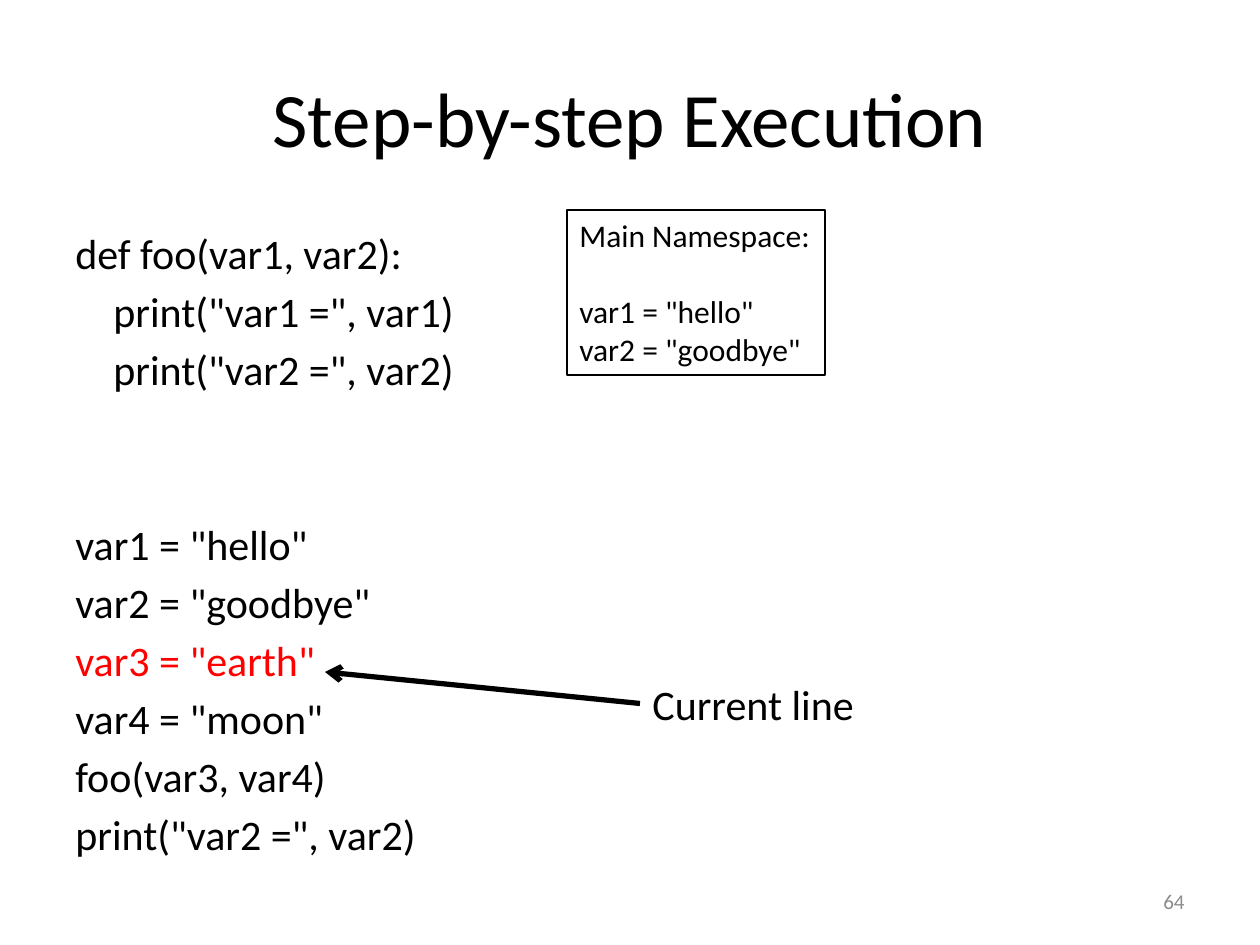
from lxml.etree import SubElement
from pptx import Presentation
from pptx.dml.color import RGBColor
from pptx.enum.shapes import MSO_CONNECTOR, MSO_SHAPE
from pptx.enum.text import MSO_ANCHOR, PP_ALIGN
from pptx.oxml.ns import qn
from pptx.util import Pt

BLACK = RGBColor(0x00, 0x00, 0x00)
RED = RGBColor(0xFF, 0x00, 0x00)
GRAY = RGBColor(0x8C, 0x8C, 0x8C)
EMU_PER_PX = 914400 / 126


def px(*lengths):
    return [round(length * EMU_PER_PX) for length in lengths]


def write(box, lines, size, anchor=MSO_ANCHOR.TOP, align=PP_ALIGN.LEFT, wrap=True):
    """Fill a box with (text, color, points before, indent in px) lines."""
    frame = box.text_frame
    frame.word_wrap = wrap
    frame.vertical_anchor = anchor
    for number, (text, color, before, indent) in enumerate(lines):
        para = frame.add_paragraph() if number else frame.paragraphs[0]
        para.text = text
        para.alignment = align
        para.space_before = Pt(before)
        para.font.name = "Calibri"
        para.font.size = Pt(size)
        para.font.color.rgb = color
        if indent:
            para._p.get_or_add_pPr().set("marL", str(px(indent)[0]))


deck = Presentation()
deck.slide_width, deck.slide_height = px(1260, 945)
page = deck.slides.add_slide(deck.slide_layouts[5])

# Title
title = page.shapes.title
title.left, title.top, title.width, title.height = px(63, 38, 1134, 158)
write(title, [("Step-by-step Execution", BLACK, 0, 0)], 44,
      MSO_ANCHOR.MIDDLE, PP_ALIGN.CENTER)

# Program, with a two-line gap between the function and the main part
GAP = 4.3
PART_GAP = 71.4
code = page.shapes.add_textbox(*px(63, 221, 1134, 624))
write(code, [
    ("def foo(var1, var2):", BLACK, 0, 0),
    ('print("var1 =", var1)', BLACK, GAP, 38),
    ('print("var2 =", var2)', BLACK, GAP, 38),
    ('var1 = "hello"', BLACK, PART_GAP, 0),
    ('var2 = "goodbye"', BLACK, GAP, 0),
    ('var3 = "earth"', RED, GAP, 0),
    ('var4 = "moon"', BLACK, GAP, 0),
    ("foo(var3, var4)", BLACK, GAP, 0),
    ('print("var2 =", var2)', BLACK, GAP, 0),
], 24)

# Slide number
number_box = page.shapes.add_textbox(*px(903, 876, 294, 50))
write(number_box, [("64", GRAY, 0, 0)], 12, MSO_ANCHOR.MIDDLE, PP_ALIGN.RIGHT)

# Label of the current line
label = page.shapes.add_textbox(*px(640, 672, 229, 63))
write(label, [("Current line", BLACK, 0, 0)], 24, wrap=False)

# Main namespace
namespace = page.shapes.add_shape(MSO_SHAPE.RECTANGLE, *px(567, 210, 258, 165))
namespace.shadow.inherit = False
namespace.fill.background()
namespace.line.color.rgb = BLACK
namespace.line.width = Pt(0.75)
write(namespace, [
    ("Main Namespace:", BLACK, 0, 0),
    ('var1 = "hello"', BLACK, 22, 0),
    ('var2 = "goodbye"', BLACK, 0, 0),
], 18)

# Arrow from the label to the current line
arrow = page.shapes.add_connector(MSO_CONNECTOR.STRAIGHT, *px(640, 704, 325, 672))
arrow.begin_connect(label, 1)
arrow.line.color.rgb = BLACK
arrow.line.width = Pt(3)
SubElement(arrow.line._get_or_add_ln(), qn("a:tailEnd"), type="arrow")
SubElement(arrow._element.spPr, qn("a:effectLst"))

deck.save("out.pptx")
